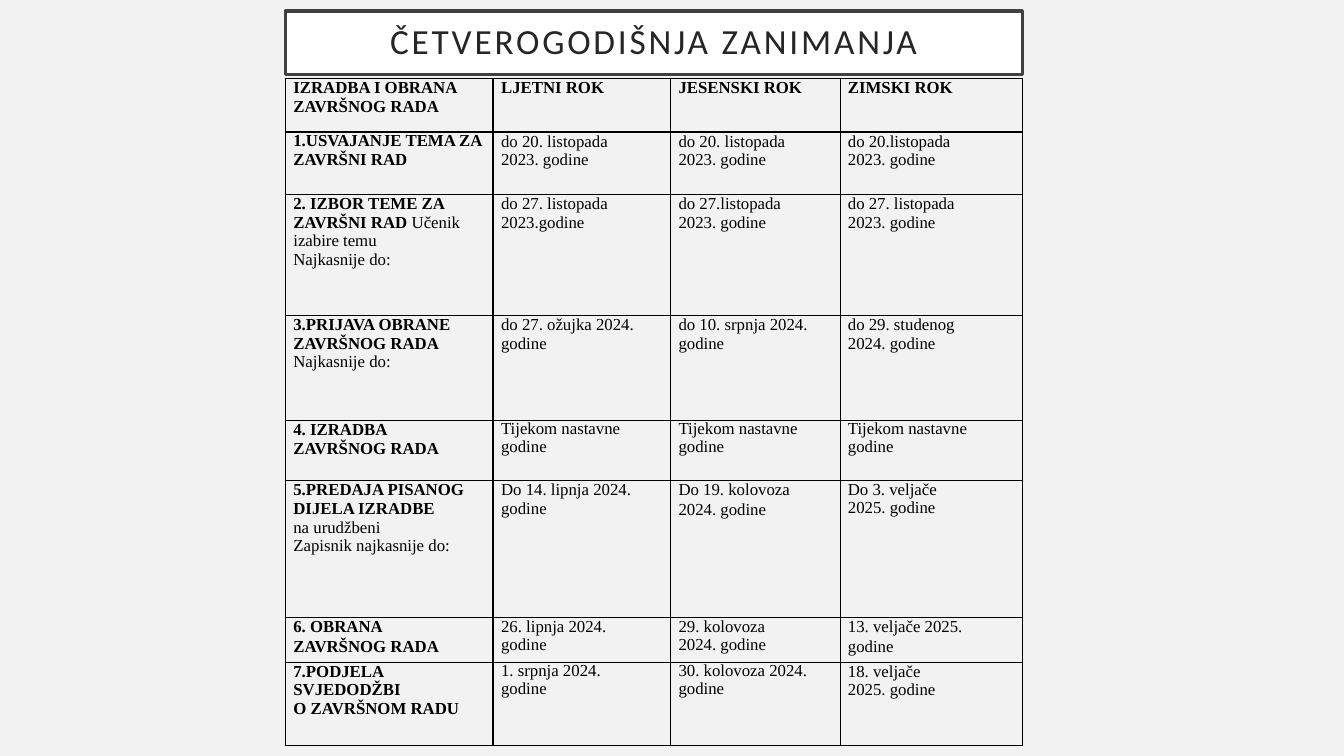
import dataclasses
import pptx
import pptx.dml.color
import pptx.enum.text
import pptx.oxml
import pptx.oxml.ns
import pptx.util
from pptx.util import Inches, Pt

FONT = "Times New Roman"
NS = pptx.oxml.ns.nsdecls("a")


@dataclasses.dataclass
class Column:
    width: float
    left: float
    right: float  # right indent of loosely set cells


@dataclasses.dataclass
class Cell:
    """Lines of a cell; in a line, text after "|" is regular, not bold."""
    lines: list[str]
    leads: tuple = (13.4, 1.0)  # above 2: points, otherwise a multiple
    loose: bool = False


@dataclasses.dataclass
class Row:
    height: float
    cells: list[Cell]


def label(*lines: str, leads: tuple = (1.0, 1.0)) -> Cell:
    return Cell(list(lines), leads)


def date(*lines: str, leads: tuple = (13.4, 1.0)) -> Cell:
    return Cell(["|" + line for line in lines], leads)


def loose(*lines: str) -> Cell:
    return Cell(["|" + line for line in lines], (0.97, 0.97), True)


TIGHT = (13.3, 13.8)
COLUMNS = [
    Column(2.06, 0.08, 0.05),
    Column(1.76, 0.08, 0.4),
    Column(1.69, 0.08, 0.3),
    Column(1.8, 0.07, 0.5),
]
ROWS = [
    Row(0.53, [
        Cell(["IZRADBA I OBRANA", "ZAVRŠNOG RADA"]),
        Cell(["LJETNI ROK"]),
        Cell(["JESENSKI ROK"]),
        Cell(["ZIMSKI ROK"]),
    ]),
    Row(0.62, [
        label("1.USVAJANJE TEMA ZA ZAVRŠNI RAD"),
        date("do 20. listopada", "2023. godine"),
        date("do 20. listopada", "2023. godine"),
        date("do 20.listopada", "2023. godine"),
    ]),
    Row(1.2, [
        label("2. IZBOR TEME ZA ZAVRŠNI RAD |Učenik izabire temu",
              "|Najkasnije do:", leads=(1.0, 13.1)),
        date("do 27. listopada", "2023.godine"),
        date("do 27.listopada", "2023. godine"),
        date("do 27. listopada", "2023. godine"),
    ]),
    Row(1.04, [
        label("3.PRIJAVA OBRANE ZAVRŠNOG RADA |Najkasnije do:"),
        date("do 27. ožujka 2024. godine"),
        date("do 10. srpnja 2024. godine"),
        date("do 29. studenog", "2024. godine"),
    ]),
    Row(0.6, [
        label("4. IZRADBA", "ZAVRŠNOG RADA", leads=TIGHT),
        *[loose("Tijekom nastavne godine") for _ in COLUMNS[1:]],
    ]),
    Row(1.36, [
        label("5.PREDAJA PISANOG DIJELA IZRADBE", "|na urudžbeni",
              "|Zapisnik najkasnije do:", leads=(1.0, 1.0, 13.2)),
        date("Do 14. lipnja 2024. godine"),
        date("Do 19. kolovoza", "2024. godine", leads=TIGHT),
        loose("Do 3. veljače 2025. godine"),
    ]),
    Row(0.44, [
        label("6. OBRANA", "ZAVRŠNOG RADA", leads=TIGHT),
        loose("26. lipnja 2024. godine"),
        loose("29. kolovoza", "2024. godine"),
        date("13. veljače 2025.", "godine", leads=TIGHT),
    ]),
    Row(0.83, [
        label("7.PODJELA SVJEDODŽBI", "O ZAVRŠNOM RADU"),
        loose("1. srpnja 2024. godine"),
        loose("30. kolovoza 2024. godine"),
        date("18. veljače", "2025. godine", leads=(13.3, 13.3)),
    ]),
]


def paint(color, value: str) -> None:
    color.rgb = pptx.dml.color.RGBColor.from_string(value)


def fill(target, value: str) -> None:
    target.solid()
    paint(target.fore_color, value)


def add_title(slide, text: str) -> None:
    title = slide.shapes.title
    title.left, title.top = Inches(2.83), Inches(0.11)
    title.width, title.height = Inches(7.31), Inches(0.63)
    fill(title.fill, "FFFFFF")
    fill(title.line.fill, "404040")
    title.line.width = Pt(2.5)
    frame = title.text_frame
    frame.text = text
    frame.word_wrap = True
    frame.auto_size = pptx.enum.text.MSO_AUTO_SIZE.NONE
    frame.vertical_anchor = pptx.enum.text.MSO_ANCHOR.MIDDLE
    frame.margin_left = frame.margin_right = Inches(0.2)
    frame.margin_top = frame.margin_bottom = Inches(0.2)
    para = frame.paragraphs[0]
    para.alignment = pptx.enum.text.PP_ALIGN.CENTER
    para.line_spacing = 0.9
    font = para.runs[0].font
    font.name, font.size = "Calibri", Pt(25.2)
    paint(font.color, "262626")
    para.runs[0]._r.get_or_add_rPr().set("spc", "200")


def add_border(cell) -> None:
    props = cell._tc.get_or_add_tcPr()
    for side in ("lnL", "lnR", "lnT", "lnB"):
        props.append(pptx.oxml.parse_xml(
            f'<a:{side} {NS} w="{Pt(1)}"><a:solidFill>'
            f'<a:srgbClr val="000000"/></a:solidFill></a:{side}>'))


def add_runs(para, line: str) -> None:
    strong, _, plain = line.partition("|")
    for text, bold in ((strong, True), (plain, False)):
        if text:
            run = para.add_run()
            run.text = text
            run.font.name, run.font.size = FONT, Pt(12)
            run.font.bold = bold
            paint(run.font.color, "000000")


def fill_cell(cell, data: Cell, col: Column, tight: bool) -> None:
    cell.margin_left = cell.margin_right = 0
    cell.margin_top = cell.margin_bottom = 0
    add_border(cell)
    cell.fill.background()
    frame = cell.text_frame
    for i, (line, lead) in enumerate(zip(data.lines, data.leads)):
        para = frame.add_paragraph() if i else frame.paragraphs[0]
        add_runs(para, line)
        para.line_spacing = Pt(lead) if lead > 2 else lead
        para.space_before = Pt(0.1 if i else 0)
        props = para._p.get_or_add_pPr()
        props.set("marL", str(Inches(col.left)))
        props.set("indent", "0")
        if tight or data.loose:
            props.set("marR", str(Inches(col.right)))


def add_dates(slide) -> None:
    frame = slide.shapes.add_table(
        len(ROWS), len(COLUMNS), Inches(2.83), Inches(0.78),
        Inches(sum(col.width for col in COLUMNS)),
        Inches(sum(row.height for row in ROWS)))
    table = frame.table
    table.first_row = table.horz_banding = False
    for c, col in enumerate(COLUMNS):
        table.columns[c].width = Inches(col.width)
    for r, row in enumerate(ROWS):
        table.rows[r].height = Inches(row.height)
        for c, (data, col) in enumerate(zip(row.cells, COLUMNS)):
            fill_cell(table.cell(r, c), data, col, c == 0)


def main() -> None:
    deck = pptx.Presentation()
    deck.slide_width, deck.slide_height = Inches(13.33), Inches(7.5)
    slide = deck.slides.add_slide(deck.slide_layouts[5])
    fill(slide.background.fill, "F2F2F2")
    add_title(slide, "ČETVEROGODIŠNJA ZANIMANJA")
    add_dates(slide)
    deck.save("out.pptx")


if __name__ == "__main__":
    main()
